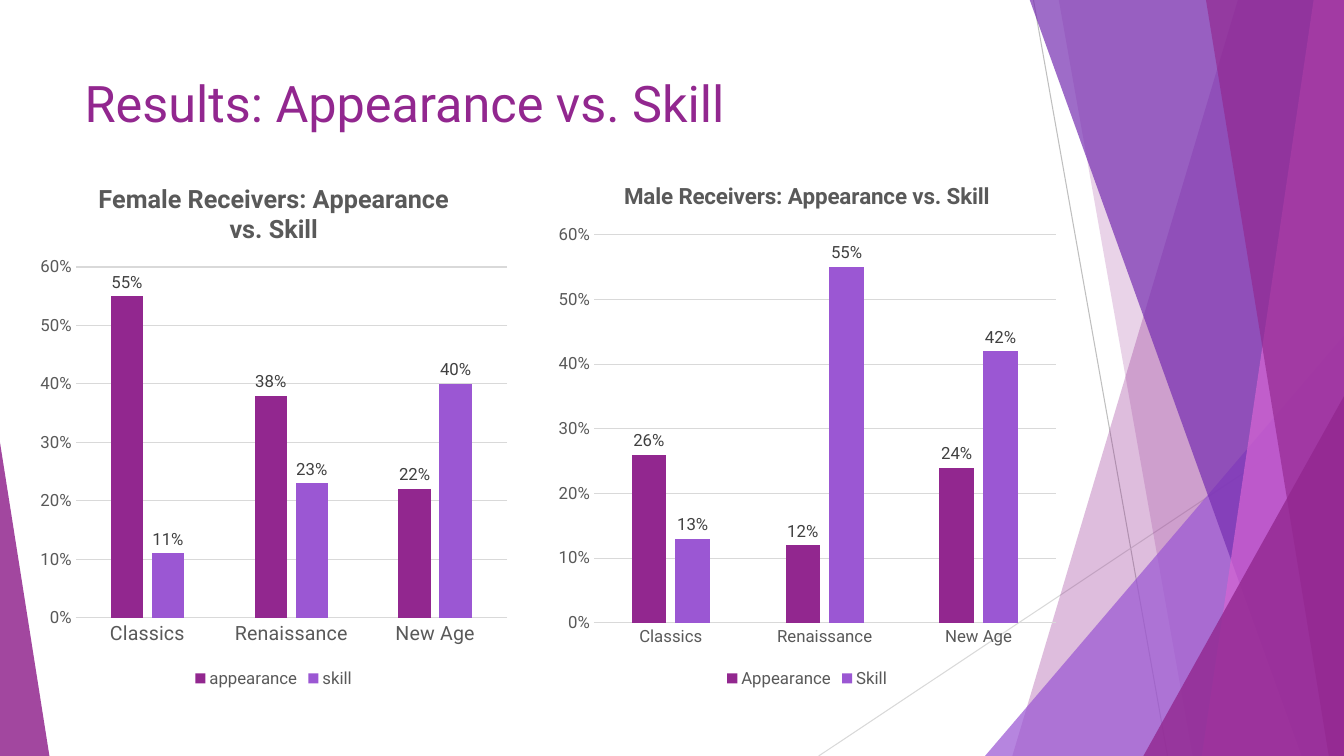
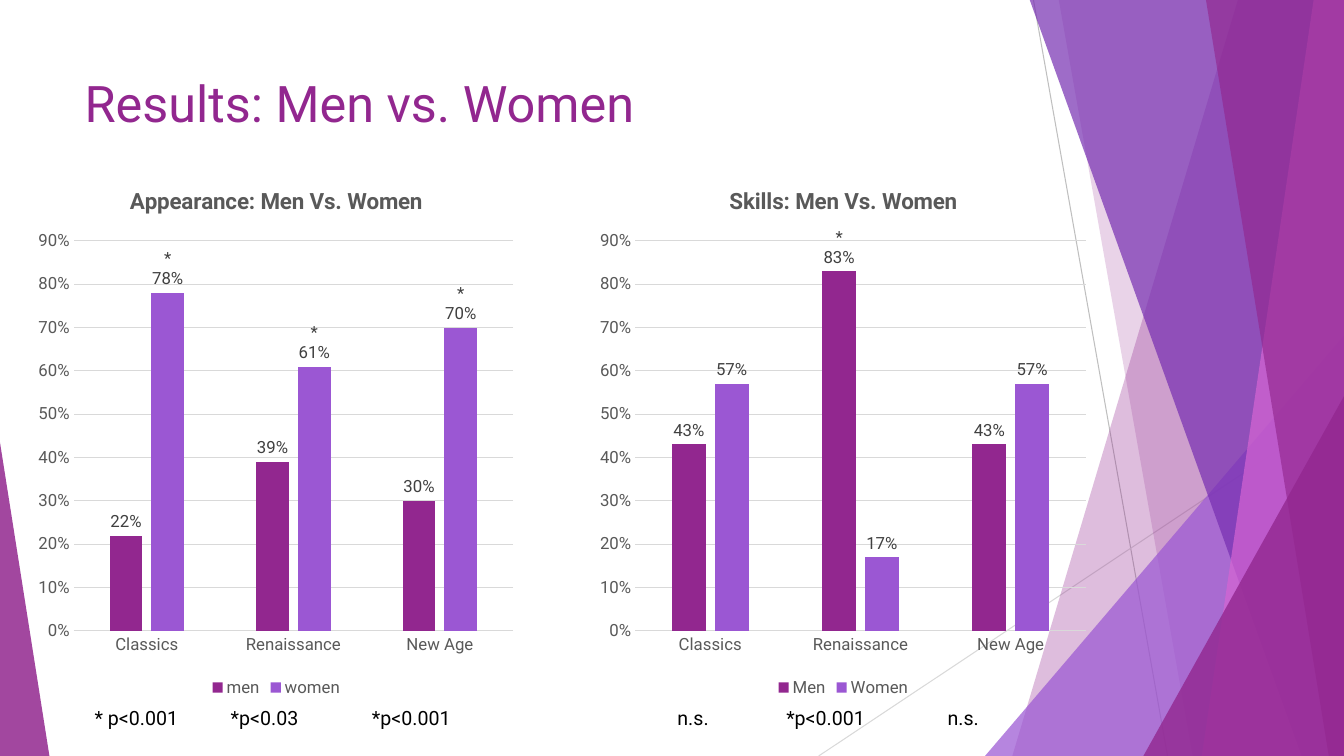
"""Build two result slides with paired column charts."""
from dataclasses import dataclass

from lxml import etree
from pptx import Presentation
from pptx.chart.data import CategoryChartData
from pptx.dml.color import RGBColor
from pptx.enum.chart import XL_CHART_TYPE, XL_LABEL_POSITION, XL_LEGEND_POSITION, XL_TICK_MARK
from pptx.enum.shapes import MSO_CONNECTOR, MSO_SHAPE
from pptx.oxml.ns import qn
from pptx.util import Emu, Pt

COLUMNS = XL_CHART_TYPE.COLUMN_CLUSTERED
OUTSIDE_END = XL_LABEL_POSITION.OUTSIDE_END
LEGEND_BOTTOM = XL_LEGEND_POSITION.BOTTOM
NO_TICK = XL_TICK_MARK.NONE
STRAIGHT = MSO_CONNECTOR.STRAIGHT
TRIANGLE = MSO_SHAPE.ISOSCELES_TRIANGLE
EMU_PER_PX = 9144
WIDTH, HEIGHT = 1333, 750


@dataclass(frozen=True)
class Theme:
    font: str = "Roboto"
    plum: str = "92278F"
    violet: str = "9B57D3"
    indigo: str = "762EB1"
    pink: str = "D665D3"
    black: str = "000000"
    label: str = "404040"
    muted: str = "595959"
    grid: str = "D9D9D9"
    ray: str = "BFBFBF"
    title_size: int = 36
    note_size: int = 14
    chart_size: int = 12
    hairline: float = 0.75


THEME = Theme()
CATEGORIES = ["Classics", "Renaissance", "New Age"]
TITLE_BOX = (74, 67, 940, 144)

RAYS = [((1025, 0), (1158, HEIGHT), THEME.ray), ((WIDTH, 403), (812, HEIGHT), THEME.grid)]

# Each band runs from its top-left and bottom-left x to the right edge.
BACKDROP = [
    ("band", (1228, 1004), THEME.plum, 30),
    ("band", (1050, 1183), THEME.plum, 20),
    ("triangle", (977, 333, 356, 417, 1), THEME.violet, 72),
    ("band", (1021, 1291), THEME.indigo, 70),
    ("band", (1303, 1192), THEME.pink, 70),
    ("band", (1196, 1318), THEME.plum, 65),
    ("triangle", (1134, 393, 199, 357, 1), THEME.plum, 80),
    ("triangle", (0, 439, 49, 311, 0), THEME.plum, 85),
]

SLIDES = [
    {
        "title": "Results: Appearance vs. Skill",
        "top": 0.6,
        "charts": [
            {"title": "Female Receivers: Appearance vs. Skill", "title_size": 18, "category_size": 14,
             "box": (31, 161, 481, 526), "plot": (75, 265, 428, 348),
             "series": [("appearance", (0.55, 0.38, 0.22), ()), ("skill", (0.11, 0.23, 0.4), ())]},
            {"title": "Male Receivers: Appearance vs. Skill", "title_size": 16, "category_size": 12,
             "box": (544, 161, 513, 526), "plot": (589, 233, 458, 385),
             "series": [("Appearance", (0.26, 0.12, 0.24), ()), ("Skill", (0.13, 0.55, 0.42), ())]},
        ],
        "notes": [],
    },
    {
        "title": "Results: Men vs. Women",
        "top": 0.9,
        "charts": [
            {"title": "Appearance: Men Vs. Women", "title_size": 16, "category_size": 12,
             "box": (29, 165, 490, 531), "plot": (73, 239, 436, 387),
             "series": [("men", (0.22, 0.39, 0.3), ()), ("women", (0.78, 0.61, 0.7), (0, 1, 2))]},
            {"title": "Skills: Men Vs. Women", "title_size": 16, "category_size": 12,
             "box": (585, 165, 503, 531), "plot": (630, 239, 447, 387),
             "series": [("Men", (0.43, 0.83, 0.43), (1,)), ("Women", (0.57, 0.17, 0.57), ())]},
        ],
        "notes": [
            ((74, 695, 445, 34), [(10, "* p<0.001"), (145, "*p<0.03"), (285, "*p<0.001")]),
            ((643, 695, 445, 34), [(19, "n.s."), (127, "*p<0.001"), (287, "n.s.")]),
        ],
    },
]


def px(value):
    return Emu(value * EMU_PER_PX)


def place(box):
    return [px(value) for value in box]


def style_font(font, size, color, bold=False):
    font.name, font.size, font.bold = THEME.font, Pt(size), bold
    font.color.rgb = RGBColor.from_string(color)


def style_line(line, color):
    line.color.rgb = RGBColor.from_string(color)
    line.width = Pt(THEME.hairline)


def style_facet(shape, color, opacity):
    shape.shadow.inherit = False
    shape.line.fill.background()
    shape.fill.solid()
    shape.fill.fore_color.rgb = RGBColor.from_string(color)
    for tint in shape.fill._xPr.iter(qn("a:srgbClr")):
        etree.SubElement(tint, qn("a:alpha"), val=str(opacity * 1000))


def add_backdrop(page):
    for start, end, color in RAYS:
        ray = page.shapes.add_connector(STRAIGHT, *place(start + end))
        style_line(ray.line, color)
        etree.SubElement(ray._element.spPr, qn("a:effectLst"))
    for kind, geometry, color, opacity in BACKDROP:
        if kind == "band":
            top_x, bottom_x = geometry
            outline = page.shapes.build_freeform(top_x, -1, scale=EMU_PER_PX)
            outline.add_line_segments([(WIDTH, -1), (WIDTH, HEIGHT), (bottom_x, HEIGHT)])
            facet = outline.convert_to_shape()
        else:
            *box, apex = geometry
            facet = page.shapes.add_shape(TRIANGLE, *place(box))
            facet.adjustments[0] = apex
        style_facet(facet, color, opacity)


def add_text(page, box, text, size, color):
    frame = page.shapes.add_textbox(*place(box)).text_frame
    frame.word_wrap = True
    para = frame.paragraphs[0]
    span = para.add_run()
    span.text = text
    style_font(span.font, size, color)
    return para


def add_note(page, box, entries):
    text = "".join(f"\t{entry}" for _, entry in entries)
    para = add_text(page, box, text, THEME.note_size, THEME.black)
    tabs = etree.SubElement(para._p.get_or_add_pPr(), qn("a:tabLst"))
    for position, _ in entries:
        etree.SubElement(tabs, qn("a:tab"), pos=str(px(position)), algn="l")


def set_plot_layout(chart, box, plot):
    area = chart._chartSpace.chart.plotArea
    for old in area.findall(qn("c:layout")):
        area.remove(old)
    layout = etree.Element(qn("c:layout"))
    area.insert(0, layout)
    manual = etree.SubElement(layout, qn("c:manualLayout"))
    left, top, width, height = box
    settings = [
        ("layoutTarget", "inner"), ("xMode", "edge"), ("yMode", "edge"),
        ("x", (plot[0] - left) / width), ("y", (plot[1] - top) / height),
        ("w", plot[2] / width), ("h", plot[3] / height),
    ]
    for name, value in settings:
        etree.SubElement(manual, qn(f"c:{name}"), val=str(value))


def style_axes(chart, top, category_size):
    categories, values = chart.category_axis, chart.value_axis
    for axis, size in ((categories, category_size), (values, THEME.chart_size)):
        axis.major_tick_mark = axis.minor_tick_mark = NO_TICK
        style_font(axis.tick_labels.font, size, THEME.muted)
    style_line(categories.format.line, THEME.grid)
    values.format.line.fill.background()
    values.minimum_scale, values.maximum_scale, values.major_unit = 0, top, 0.1
    values.has_major_gridlines = True
    style_line(values.major_gridlines.format.line, THEME.grid)
    values.tick_labels.number_format = "0%"
    values.tick_labels.number_format_is_linked = False


def style_series(series, color, values, starred):
    series.format.fill.solid()
    series.format.fill.fore_color.rgb = RGBColor.from_string(color)
    labels = series.data_labels
    labels.show_value = True
    labels.number_format = "0%"
    labels.number_format_is_linked = False
    labels.position = OUTSIDE_END
    style_font(labels.font, THEME.chart_size, THEME.label)
    for index in starred:
        label = series.points[index].data_label
        frame = label.text_frame
        for line, text in enumerate(("*", f"{values[index]:.0%}")):
            para = frame.add_paragraph() if line else frame.paragraphs[0]
            span = para.add_run()
            span.text = text
            style_font(span.font, THEME.chart_size, THEME.label)
        label.position = OUTSIDE_END


def add_column_chart(page, content, top):
    data = CategoryChartData(number_format="0%")
    data.categories = CATEGORIES
    for name, values, _ in content["series"]:
        data.add_series(name, values)
    chart = page.shapes.add_chart(COLUMNS, *place(content["box"]), data).chart
    style_font(chart.font, THEME.chart_size, THEME.black)
    chart.has_title = True
    span = chart.chart_title.text_frame.paragraphs[0].add_run()
    span.text = content["title"]
    style_font(span.font, content["title_size"], THEME.muted, bold=True)
    chart.chart_title.include_in_layout = False
    chart.has_legend = True
    chart.legend.position = LEGEND_BOTTOM
    chart.legend.include_in_layout = False
    style_font(chart.legend.font, THEME.chart_size, THEME.muted)
    style_axes(chart, top, content["category_size"])
    plot = chart.plots[0]
    plot.gap_width, plot.overlap, plot.vary_by_categories = 219, -27, False
    colors = (THEME.plum, THEME.violet)
    for series, color, (_, values, starred) in zip(plot.series, colors, content["series"]):
        style_series(series, color, values, starred)
    set_plot_layout(chart, content["box"], content["plot"])


def main():
    deck = Presentation()
    deck.slide_width, deck.slide_height = px(WIDTH), px(HEIGHT)
    for content in SLIDES:
        page = deck.slides.add_slide(deck.slide_layouts[6])
        add_backdrop(page)
        add_text(page, TITLE_BOX, content["title"], THEME.title_size, THEME.plum)
        for chart in content["charts"]:
            add_column_chart(page, chart, content["top"])
        for box, entries in content["notes"]:
            add_note(page, box, entries)
    deck.save("out.pptx")


if __name__ == "__main__":
    main()
